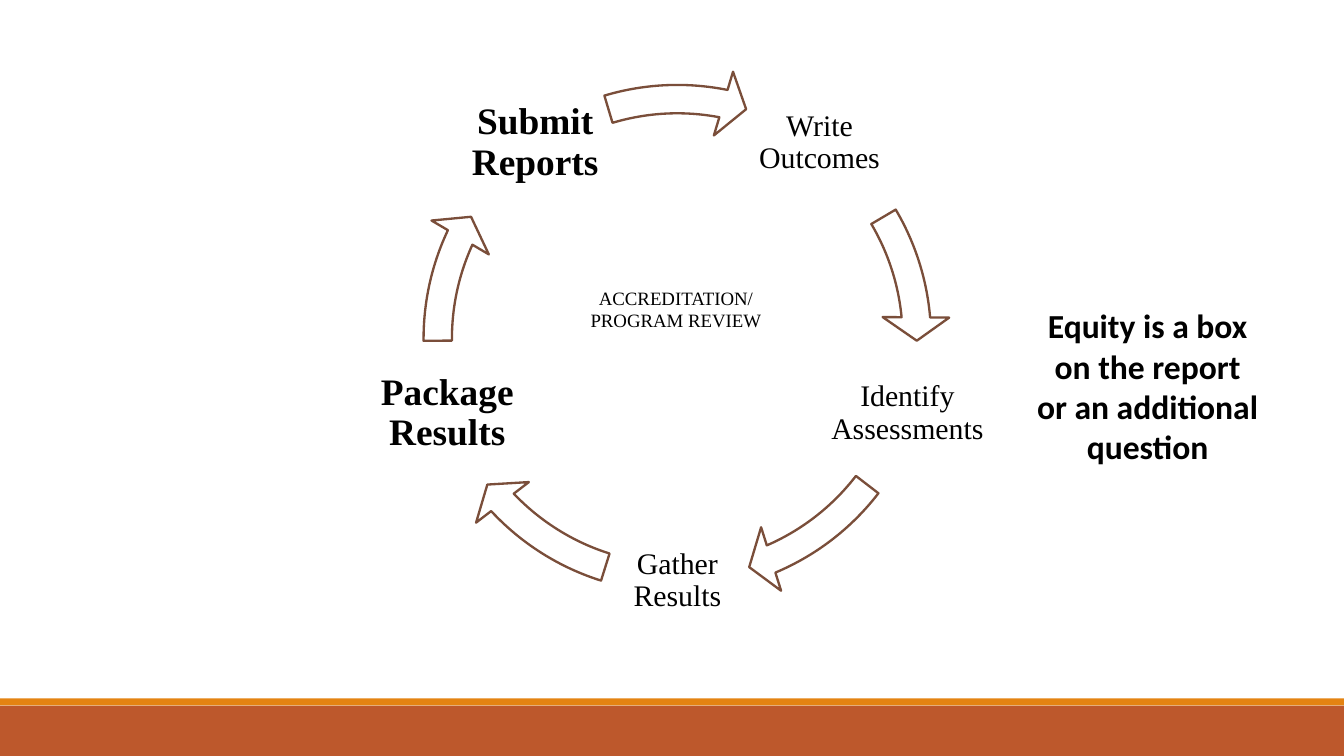
from math import cos, radians, sin

from pptx import Presentation
from pptx.dml.color import RGBColor
from pptx.enum.shapes import MSO_SHAPE
from pptx.enum.text import MSO_ANCHOR, MSO_AUTO_SIZE, PP_ALIGN
from pptx.util import Inches, Pt

RECTANGLE = MSO_SHAPE.RECTANGLE
CIRCULAR_ARROW = MSO_SHAPE.CIRCULAR_ARROW
MIDDLE, TOP = MSO_ANCHOR.MIDDLE, MSO_ANCHOR.TOP
CENTER = PP_ALIGN.CENTER
GROW = MSO_AUTO_SIZE.SHAPE_TO_FIT_TEXT
FIXED = MSO_AUTO_SIZE.NONE

BLACK = RGBColor(0x00, 0x00, 0x00)
WHITE = RGBColor(0xFF, 0xFF, 0xFF)
BROWN = RGBColor(0x7A, 0x4E, 0x3A)
RUST = RGBColor(0xBD, 0x58, 0x2C)
ORANGE = RGBColor(0xE4, 0x83, 0x12)
SERIF, SANS = "Times New Roman", "Calibri"

deck = Presentation()
deck.slide_width, deck.slide_height = Inches(10), Inches(5.625)
WIDTH, HEIGHT = deck.slide_width, deck.slide_height
slide = deck.slides.add_slide(deck.slide_layouts[6])
shapes = slide.shapes


def add_shape(preset, left, top, width, height, fill):
    shape = shapes.add_shape(preset, int(left), int(top), int(width), int(height))
    shape.shadow.inherit = False
    shape.fill.solid()
    shape.fill.fore_color.rgb = fill
    shape.line.fill.background()
    return shape


def add_text(text, *, left, top, width, height, size, font=SERIF, bold=False,
             anchor=TOP, spacing=1.0, inset=None, autosize=FIXED):
    frame = shapes.add_textbox(int(left), int(top), int(width), int(height)).text_frame
    frame.word_wrap = True
    frame.auto_size = autosize
    frame.vertical_anchor = anchor
    if inset is not None:
        frame.margin_left = frame.margin_right = Inches(inset)
        frame.margin_top = frame.margin_bottom = Inches(inset)
    paragraph = frame.paragraphs[0]
    paragraph.alignment = CENTER
    paragraph.line_spacing = spacing
    run = paragraph.add_run()
    run.text = text
    run.font.name, run.font.size, run.font.bold = font, Pt(size), bold
    run.font.color.rgb = BLACK


footer_top = HEIGHT * 14 / 15
stripe_height = HEIGHT * 0.0095
add_shape(RECTANGLE, 0, footer_top, WIDTH, HEIGHT - footer_top, RUST)
add_shape(RECTANGLE, 0, footer_top - stripe_height, WIDTH, stripe_height, ORANGE)

center_x, center_y = WIDTH * 0.504, HEIGHT * 0.448
ring_size = WIDTH * 0.406
step_radius = WIDTH * 0.18
step_height = WIDTH * 0.108
first_angle, step_angle = -54, 72

steps = [
    ("Write Outcomes", 0.108, 16, False, 212.94, 197.66),
    ("Identify Assessments", 0.14, 16, False, 40.16, 22.53),
    ("Gather Results", 0.108, 16, False, 82.12, 64.49),
    ("Package Results", 0.108, 20, True, 122.99, 107.7),
    ("Submit Reports", 0.108, 20, True, 168.67, 151.98),
]

for index, (step, share, size, bold, arrow_end, arrow_start) in enumerate(steps):
    angle = radians(first_angle + index * step_angle)
    step_width = WIDTH * share
    add_text(step,
             left=center_x + step_radius * cos(angle) - step_width / 2,
             top=center_y + step_radius * sin(angle) - step_height / 2,
             width=step_width, height=step_height, size=size, bold=bold,
             anchor=MIDDLE, spacing=0.9, inset=0.03 if bold else 0.02)
    arrow = add_shape(CIRCULAR_ARROW, center_x - ring_size / 2,
                      center_y - ring_size / 2, ring_size, ring_size, WHITE)
    arrow.line.color.rgb = BROWN
    arrow.line.width = Pt(1.25)
    for position, value in enumerate((0.052, 3.357, arrow_end, arrow_start, 0.061)):
        arrow.adjustments[position] = value

add_text("ACCREDITATION/ PROGRAM REVIEW", left=WIDTH * 0.41, top=HEIGHT * 0.37,
         width=WIDTH * 0.186, height=HEIGHT * 0.16, size=10.1)
add_text("Equity is a box on the report or an additional question",
         left=WIDTH * 0.761, top=HEIGHT * 0.395, width=WIDTH * 0.186,
         height=HEIGHT * 0.233, size=18, font=SANS, bold=True, autosize=GROW)

deck.save("out.pptx")
